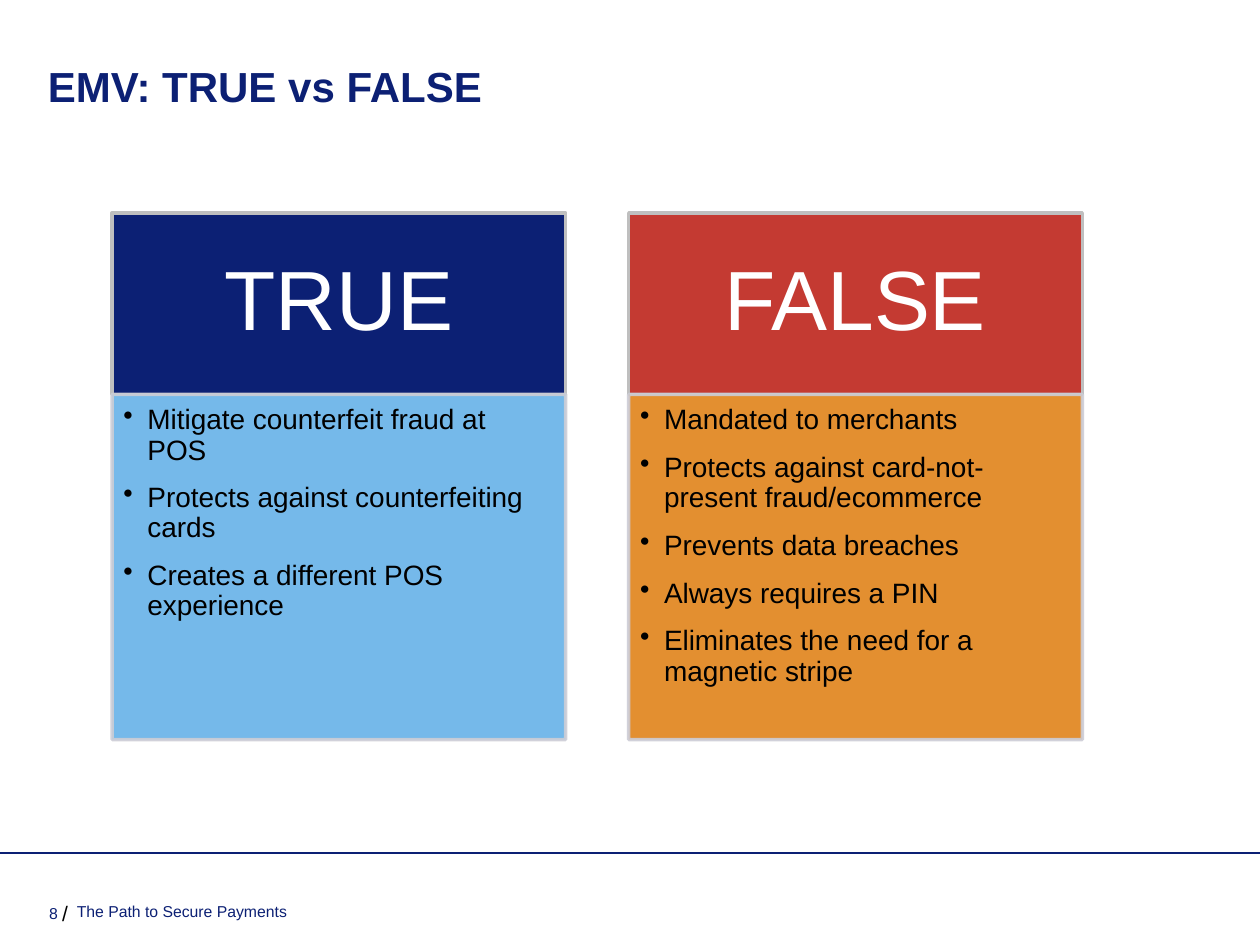
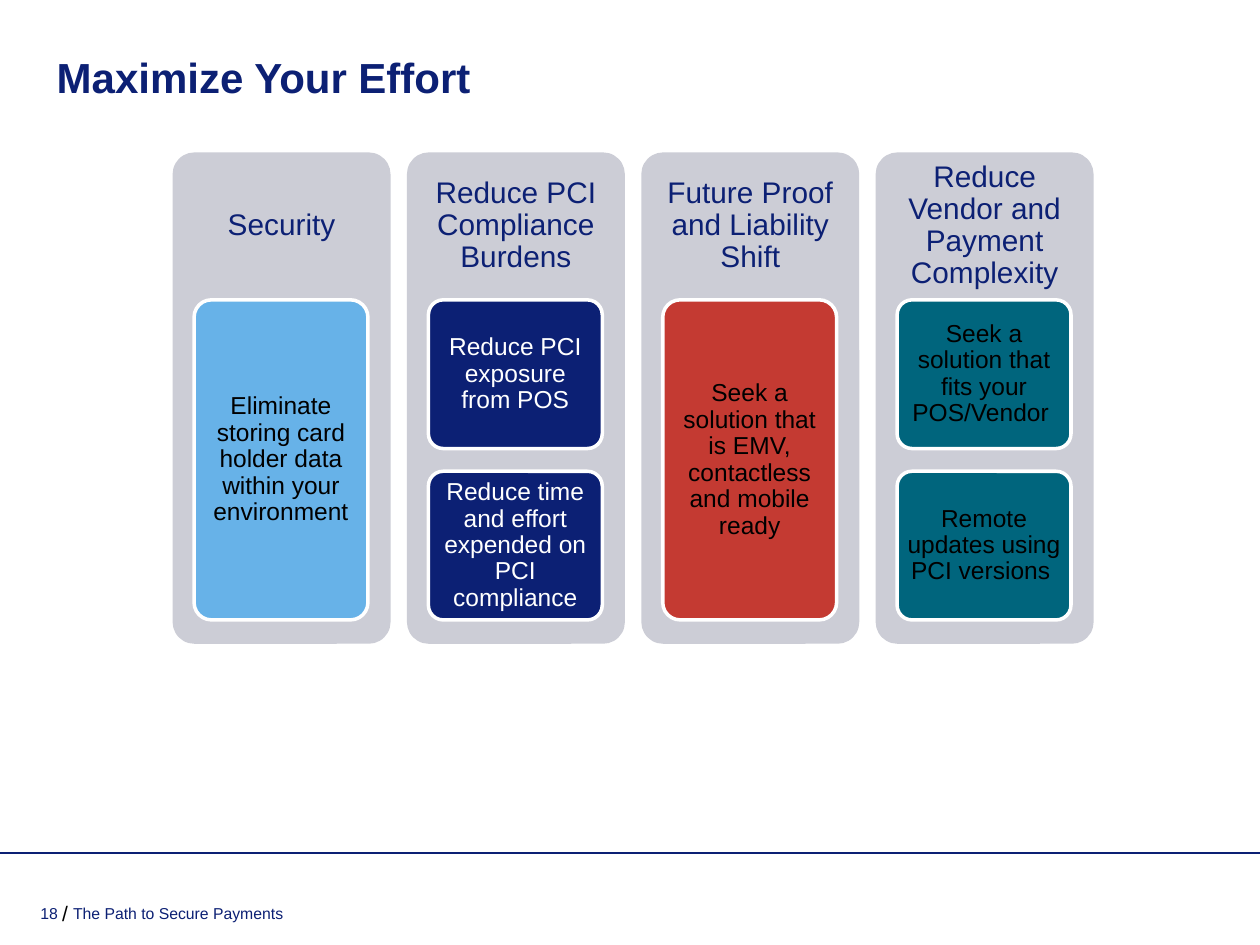
from lxml.etree import SubElement
from pptx import Presentation
from pptx.dml.color import RGBColor
from pptx.enum.shapes import MSO_CONNECTOR, MSO_SHAPE
from pptx.enum.text import MSO_ANCHOR, MSO_AUTO_SIZE, PP_ALIGN
from pptx.oxml.ns import qn
from pptx.util import Inches, Pt

FONT = "Arial"
COLORS = {
    "navy": "0C2074", "red": "C43A32", "sky": "67B2E8", "orange": "E0831A",
    "teal": "00657D", "mist": "CCCDD6", "gray": "BFBFBF",
    "white": "FFFFFF", "black": "000000",
}


def color(name):
    return RGBColor.from_string(COLORS[name])


def set_frame(frame, anchor, insets=(0, 0, 0, 0)):
    frame.word_wrap = True
    frame.auto_size = MSO_AUTO_SIZE.NONE
    frame.vertical_anchor = anchor
    left, top, right, bottom = (Inches(i) for i in insets)
    frame.margin_left, frame.margin_top = left, top
    frame.margin_right, frame.margin_bottom = right, bottom


def add_run(para, text, size, tint, bold=False):
    run = para.add_run()
    run.text = text
    font = run.font
    font.name, font.size, font.bold = FONT, Pt(size), bold
    font.color.rgb = color(tint)


def write(frame, text, size, tint, align=PP_ALIGN.CENTER, space=0.9):
    para = frame.paragraphs[0]
    para.alignment = align
    para.line_spacing = space
    add_run(para, text, size, tint)


def add_text(slide, box, text, size, tint, align, anchor, insets=(0, 0, 0, 0), space=1.0):
    frame = slide.shapes.add_textbox(*map(Inches, box)).text_frame
    set_frame(frame, anchor, insets)
    write(frame, text, size, tint, align, space)


def add_box(slide, kind, box, fill, edge=None, alpha=None):
    shape = slide.shapes.add_shape(kind, *map(Inches, box))
    shape.shadow.inherit = False
    shape.fill.solid()
    shape.fill.fore_color.rgb = color(fill)
    if kind == MSO_SHAPE.ROUNDED_RECTANGLE:
        shape.adjustments[0] = 0.1
    if edge:
        shape.line.color.rgb = color(edge)
        shape.line.width = Pt(2)
    else:
        shape.line.fill.background()
    if alpha:
        for node in shape.element.spPr.iter(qn("a:srgbClr")):
            SubElement(node, qn("a:alpha"), val=str(alpha * 1000))
    return shape


def add_list(frame, items):
    for i, item in enumerate(items):
        para = frame.add_paragraph() if i else frame.paragraphs[0]
        props = para._p.get_or_add_pPr()
        props.set("marL", str(Inches(0.19)))
        props.set("indent", str(-Inches(0.19)))
        SubElement(props, qn("a:buChar"), char="•")
        para.alignment = PP_ALIGN.LEFT
        para.line_spacing = 0.9
        para.space_after = Pt(10)
        add_run(para, item, 16, "black")


def add_slide(deck, title, box, anchor, insets):
    slide = deck.slides.add_slide(deck.slide_layouts[5])
    head = slide.shapes.title
    head.left, head.top, head.width, head.height = map(Inches, box)
    set_frame(head.text_frame, anchor, insets)
    para = head.text_frame.paragraphs[0]
    para.alignment = PP_ALIGN.LEFT
    add_run(para, title, 24, "navy", True)
    return slide


def add_footer(slide, number, left, top):
    rule = slide.shapes.add_connector(
        MSO_CONNECTOR.STRAIGHT, Inches(0), Inches(6.77), Inches(10), Inches(6.77))
    rule.line.color.rgb = color("navy")
    rule.line.width = Pt(1.5)
    SubElement(rule._element.spPr, qn("a:effectLst"))
    parts = [
        ((0.44, 7.15, 0.15, 0.2), "/", 12, "black", PP_ALIGN.CENTER),
        ((left, top, 3.17, 0.15), "The Path to Secure Payments", 9, "navy", PP_ALIGN.LEFT),
        ((0.19, 7.17, 0.27, 0.15), number, 9, "navy", PP_ALIGN.RIGHT),
    ]
    for part in parts:
        add_text(slide, *part, MSO_ANCHOR.BOTTOM)


def add_panel(slide, left, name, dark, light, items):
    head = add_box(slide, MSO_SHAPE.RECTANGLE, (left, 1.69, 3.6, 1.44), dark, "gray")
    set_frame(head.text_frame, MSO_ANCHOR.MIDDLE, (0.37, 0.21, 0.37, 0.21))
    write(head.text_frame, name, 48, "white")
    body = add_box(slide, MSO_SHAPE.RECTANGLE, (left, 3.13, 3.6, 2.74), light, "mist", 90)
    set_frame(body.text_frame, MSO_ANCHOR.TOP, (0.09, 0.09, 0.12, 0.14))
    add_list(body.text_frame, items)


def add_column(slide, left, name, fill, tint, cards):
    kind = MSO_SHAPE.ROUNDED_RECTANGLE
    add_box(slide, kind, (left, 1.21, 1.73, 3.9), "mist")
    add_text(slide, (left, 1.21, 1.73, 1.17), name, 17, "navy", PP_ALIGN.CENTER,
             MSO_ANCHOR.MIDDLE, (0.07, 0.07, 0.07, 0.07), 0.9)
    gap = 0.18
    high = (2.54 - gap * (len(cards) - 1)) / len(cards)
    for i, text in enumerate(cards):
        top = 2.38 + i * (high + gap)
        card = add_box(slide, kind, (left + 0.17, top, 1.38, high), fill, "white")
        set_frame(card.text_frame, MSO_ANCHOR.MIDDLE, (0.04, 0.03, 0.04, 0.03))
        write(card.text_frame, text, 14, tint)


def main():
    deck = Presentation()
    deck.slide_width, deck.slide_height = Inches(10), Inches(7.5)

    slide = add_slide(deck, "EMV: TRUE vs FALSE", (0.38, 0.39, 8.97, 0.49),
                      MSO_ANCHOR.BOTTOM, (0, 0, 0, 0))
    panels = [
        ("TRUE", "navy", "sky", [
            "Mitigate counterfeit fraud at POS",
            "Protects against counterfeiting cards",
            "Creates a different POS experience"]),
        ("FALSE", "red", "orange", [
            "Mandated to merchants",
            "Protects against card-not-present fraud/ecommerce",
            "Prevents data breaches",
            "Always requires a PIN",
            "Eliminates the need for a magnetic stripe"]),
    ]
    for i, panel in enumerate(panels):
        add_panel(slide, 0.89 + i * 4.1, *panel)
    add_footer(slide, "8", 0.61, 7.16)

    slide = add_slide(deck, "Maximize Your Effort", (0.38, 0.37, 9.22, 0.61),
                      MSO_ANCHOR.TOP, (0.07, 0.04, 0.07, 0.04))
    columns = [
        ("Security", "sky", "black",
         ["Eliminate storing card holder data within your environment"]),
        ("Reduce PCI Compliance Burdens", "navy", "white",
         ["Reduce PCI exposure from POS",
          "Reduce time and effort expended on PCI compliance"]),
        ("Future Proof and Liability Shift", "red", "black",
         ["Seek a solution that is EMV, contactless and mobile ready"]),
        ("Reduce Vendor and Payment Complexity", "teal", "black",
         ["Seek a solution that fits your POS/Vendor ",
          "Remote updates using PCI versions "]),
    ]
    for i, column in enumerate(columns):
        add_column(slide, 1.37 + i * 1.86, *column)
    add_footer(slide, "18", 0.58, 7.17)

    deck.save("out.pptx")


if __name__ == "__main__":
    main()
